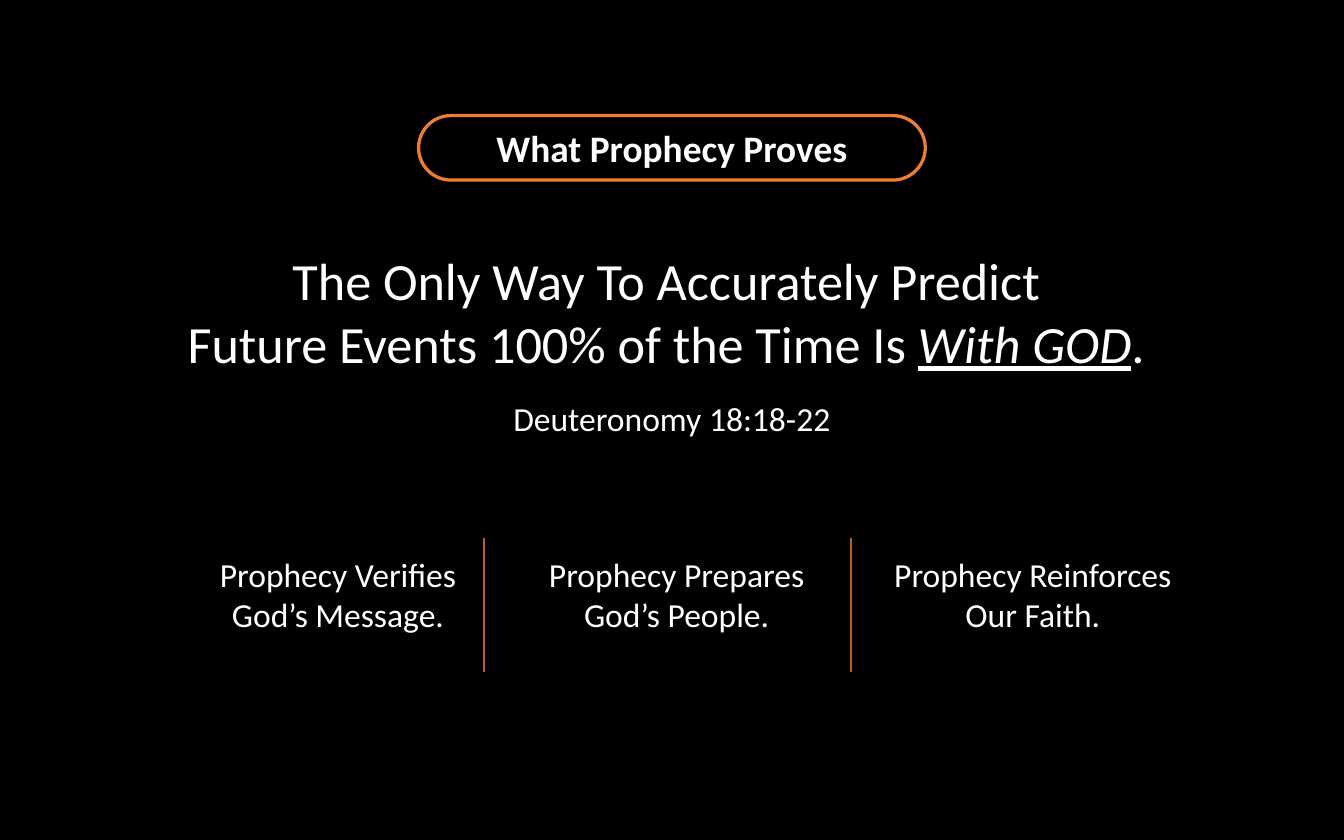
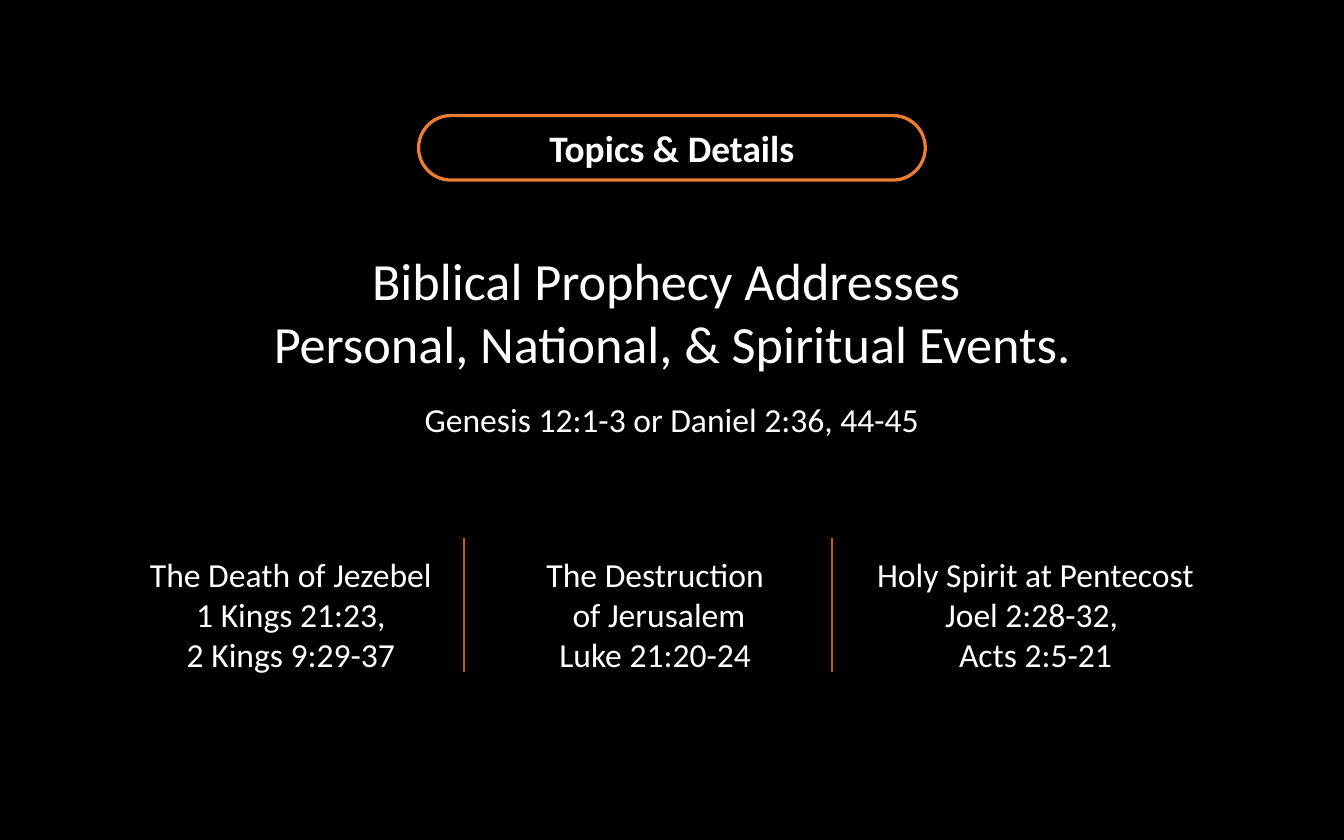
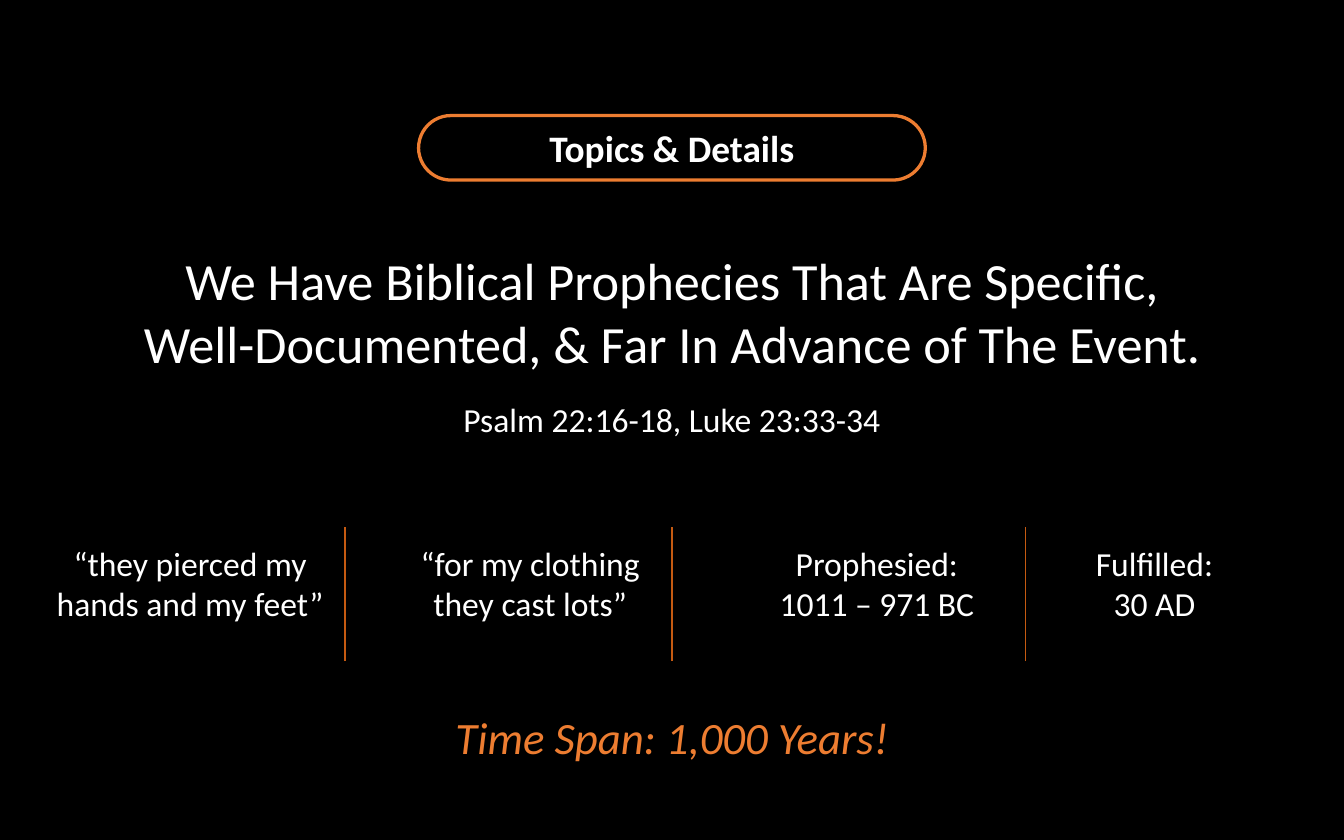
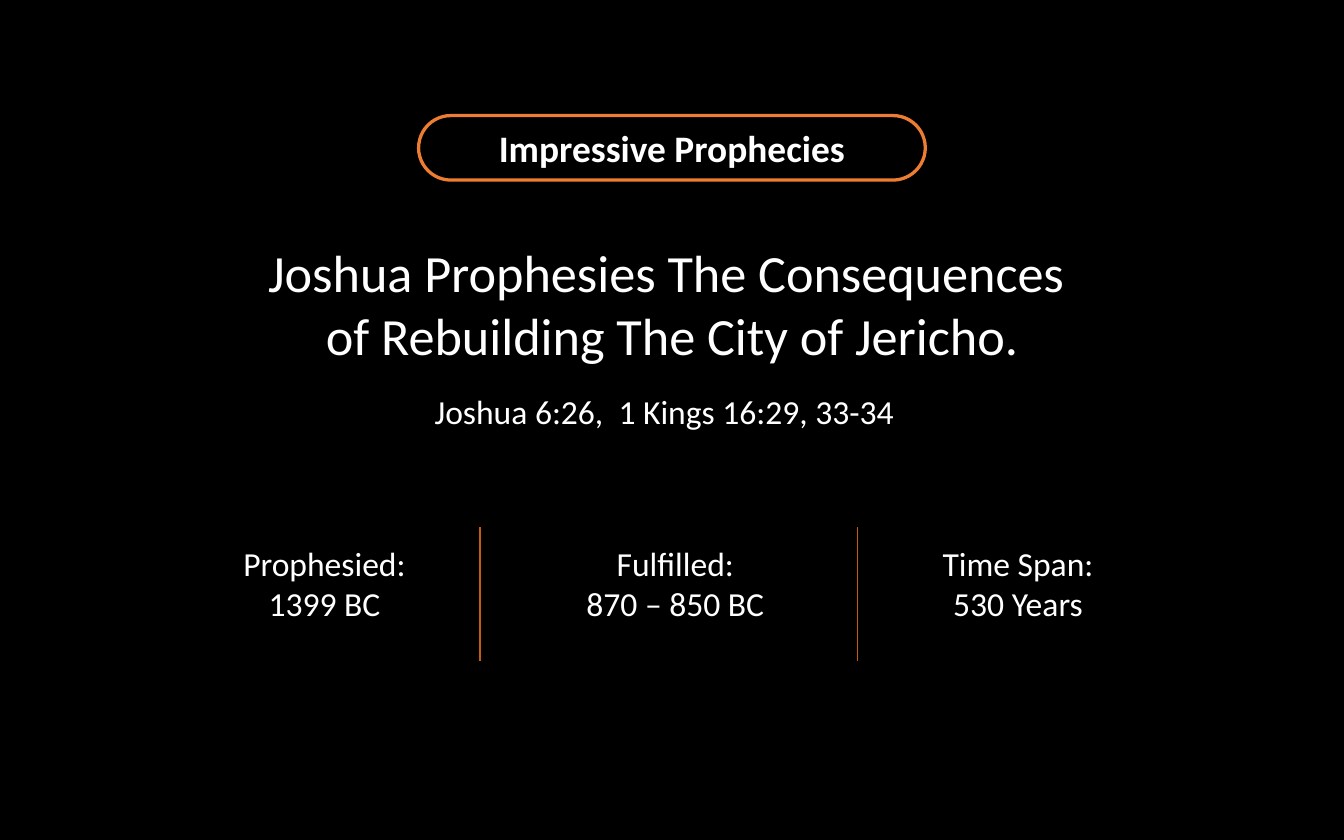
import dataclasses

import lxml.etree
import pptx
import pptx.dml.color
import pptx.enum.shapes
import pptx.enum.text
import pptx.oxml.ns
import pptx.presentation
import pptx.shapes.autoshape
import pptx.slide
import pptx.util

Inches = pptx.util.Inches

PAGE_WIDTH = 10
PAGE_HEIGHT = 6.25
FONT = "Calibri"
BLACK = "000000"
WHITE = "FFFFFF"
ORANGE = "ED7D31"
RUST = "C55A11"

HEADLINE_WIDTH = 8.68
PILL_WIDTH = 3.77
DIVIDER_RISE = 0.07
DIVIDER_LENGTH = 1


@dataclasses.dataclass(frozen=True)
class Style:
    size: int
    color: str = WHITE
    bold: bool = False
    italic: bool = False


PILL_STYLE = Style(20, bold=True)
HEADLINE_STYLE = Style(28)
BODY_STYLE = Style(18)
CLOSING_STYLE = Style(24, ORANGE, italic=True)


@dataclasses.dataclass(frozen=True)
class Column:
    left: float
    width: float
    text: str


@dataclasses.dataclass(frozen=True)
class ProphecyPage:
    title: str
    headline: str
    reference: str
    reference_width: float
    columns: tuple[Column, ...]
    dividers: tuple[float, ...]
    columns_top: float = 3.99
    columns_height: float = 0.71
    headline_top: float = 1.8
    headline_height: float = 1.04
    reference_top: float = 2.92
    emphasis: str = ""
    headline_end: str = ""
    closing: str = ""


PAGES = (
    ProphecyPage(
        title="What Prophecy Proves",
        headline="The Only Way To Accurately Predict \vFuture Events 100% of the Time Is ",
        emphasis="With GOD",
        headline_end=". ",
        reference="Deuteronomy 18:18-22",
        reference_width=2.66,
        reference_top=2.91,
        columns=(
            Column(1.44, 2.15, "Prophecy Verifies\vGod’s Message."),
            Column(3.88, 2.31, "Prophecy Prepares God’s People."),
            Column(6.53, 2.31, "Prophecy Reinforces Our Faith."),
        ),
        dividers=(3.6, 6.33),
        columns_top=4.07,
    ),
    ProphecyPage(
        title="Topics & Details",
        headline="Biblical Prophecy Addresses \vPersonal, National, & Spiritual Events.",
        headline_height=1.51,
        reference="Genesis 12:1-3 or Daniel 2:36, 44-45",
        reference_width=5.31,
        columns=(
            Column(1.01, 2.31, "The Death of Jezebel\v1 Kings 21:23,\n2 Kings 9:29-37"),
            Column(3.72, 2.31, "The Destruction\v of Jerusalem\nLuke 21:20-24"),
            Column(6.31, 2.79, "Holy Spirit at Pentecost\nJoel 2:28-32, \vActs 2:5-21"),
        ),
        dividers=(3.45, 6.19),
        columns_top=4.07,
        columns_height=1.01,
    ),
    ProphecyPage(
        title="Topics & Details",
        headline="We Have Biblical Prophecies That Are Specific,\v"
        " Well-Documented, & Far In Advance of The Event. ",
        reference="Psalm 22:16-18, Luke 23:33-34",
        reference_width=3.65,
        columns=(
            Column(0.26, 2.31, "“they pierced my hands and my feet”"),
            Column(2.89, 2.11, "“for my clothing they cast lots”"),
            Column(5.42, 2.21, "Prophesied:\n1011 – 971 BC"),
            Column(7.63, 1.92, "Fulfilled:\n30 AD"),
        ),
        dividers=(2.57, 5, 7.63),
        closing="Time Span: 1,000 Years!",
    ),
    ProphecyPage(
        title="Impressive Prophecies",
        headline="Joshua Prophesies The Consequences \vof Rebuilding The City of Jericho.",
        headline_top=1.74,
        reference="Joshua 6:26,  1 Kings 16:29, 33-34  ",
        reference_width=3.75,
        reference_top=2.86,
        columns=(
            Column(1.26, 2.31, "Prophesied:\n1399 BC"),
            Column(3.87, 2.31, "Fulfilled:\n870 – 850 BC"),
            Column(6.42, 2.31, "Time Span:\n530 Years"),
        ),
        dividers=(3.57, 6.38),
    ),
)


def rgb(color: str) -> pptx.dml.color.RGBColor:
    return pptx.dml.color.RGBColor.from_string(color)


def centered(width: float) -> float:
    return (PAGE_WIDTH - width) / 2


def format_text(shape: pptx.shapes.autoshape.Shape, style: Style) -> None:
    for para in shape.text_frame.paragraphs:
        para.alignment = pptx.enum.text.PP_ALIGN.CENTER
        for span in para.runs:
            span.font.name = FONT
            span.font.size = pptx.util.Pt(style.size)
            span.font.bold = style.bold
            span.font.italic = style.italic
            span.font.color.rgb = rgb(style.color)


def add_text(page: pptx.slide.Slide, text: str, left: float, top: float,
             width: float, height: float, style: Style) -> pptx.shapes.autoshape.Shape:
    box = page.shapes.add_textbox(Inches(left), Inches(top), Inches(width), Inches(height))
    box.text_frame.word_wrap = True
    box.text_frame.auto_size = pptx.enum.text.MSO_AUTO_SIZE.SHAPE_TO_FIT_TEXT
    box.text_frame.text = text
    format_text(box, style)
    return box


def add_pill(page: pptx.slide.Slide, title: str) -> None:
    pill = page.shapes.add_shape(
        pptx.enum.shapes.MSO_SHAPE.ROUNDED_RECTANGLE,
        Inches(centered(PILL_WIDTH)), Inches(0.86), Inches(PILL_WIDTH), Inches(0.48))
    pill.adjustments[0] = 0.5
    pill.shadow.inherit = False
    pill.fill.background()
    pill.line.color.rgb = rgb(ORANGE)
    pill.line.width = pptx.util.Pt(1.75)
    pill.text_frame.text = title
    pill.text_frame.vertical_anchor = pptx.enum.text.MSO_ANCHOR.MIDDLE
    format_text(pill, PILL_STYLE)


def add_headline(page: pptx.slide.Slide, content: ProphecyPage) -> None:
    box = add_text(page, content.headline, centered(HEADLINE_WIDTH), content.headline_top,
                   HEADLINE_WIDTH, content.headline_height, HEADLINE_STYLE)
    if content.emphasis:
        para = box.text_frame.paragraphs[0]
        emphasis, ending = para.add_run(), para.add_run()
        emphasis.text = content.emphasis
        ending.text = content.headline_end
        format_text(box, HEADLINE_STYLE)
        emphasis.font.italic = True
        emphasis.font.underline = True


def add_divider(page: pptx.slide.Slide, x: float, top: float) -> None:
    divider = page.shapes.add_connector(
        pptx.enum.shapes.MSO_CONNECTOR.STRAIGHT,
        Inches(x), Inches(top + DIVIDER_LENGTH), Inches(x), Inches(top))
    divider.line.color.rgb = rgb(RUST)
    divider.line.width = pptx.util.Pt(1)
    lxml.etree.SubElement(divider._element.spPr, pptx.oxml.ns.qn("a:effectLst"))


def add_page(deck: pptx.presentation.Presentation, content: ProphecyPage) -> None:
    page = deck.slides.add_slide(deck.slide_layouts[6])
    page.background.fill.solid()
    page.background.fill.fore_color.rgb = rgb(BLACK)
    add_pill(page, content.title)
    add_headline(page, content)
    add_text(page, content.reference, centered(content.reference_width), content.reference_top,
             content.reference_width, 0.4, BODY_STYLE)
    for column in content.columns:
        add_text(page, column.text, column.left, content.columns_top,
                 column.width, content.columns_height, BODY_STYLE)
    for x in content.dividers:
        add_divider(page, x, content.columns_top - DIVIDER_RISE)
    if content.closing:
        add_text(page, content.closing, centered(4.15), 5.23, 4.15, 0.5, CLOSING_STYLE)


def main() -> None:
    deck = pptx.Presentation()
    deck.slide_width = Inches(PAGE_WIDTH)
    deck.slide_height = Inches(PAGE_HEIGHT)
    for content in PAGES:
        add_page(deck, content)
    deck.save("out.pptx")


if __name__ == "__main__":
    main()
